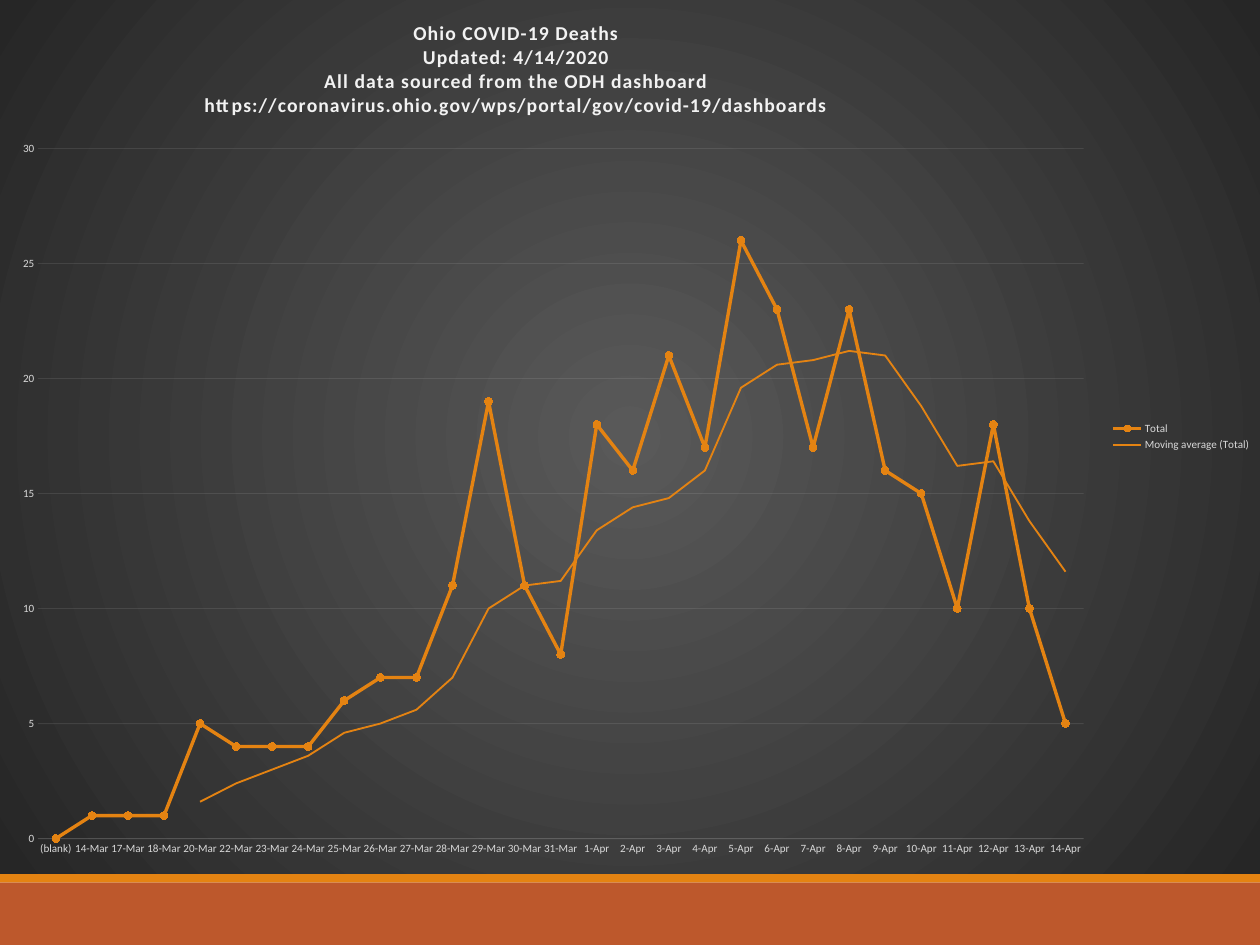
import dataclasses

import pptx
import pptx.chart.data
import pptx.dml.color
import pptx.enum.chart
import pptx.enum.shapes
import pptx.oxml
import pptx.oxml.ns
import pptx.util

Pt = pptx.util.Pt
NAMESPACES = pptx.oxml.ns.nsdecls("c", "a")

TITLE_LINES = [
    "Ohio COVID-19 Deaths",
    "Updated: 4/14/2020",
    "All data sourced from the ODH dashboard",
    "https://coronavirus.ohio.gov/wps/portal/gov/covid-19/dashboards",
]
MARCH_DAYS = [14, 17, 18, 20, *range(22, 32)]
DATES = ["(blank)"] + [f"{day}-Mar" for day in MARCH_DAYS] + [f"{day}-Apr" for day in range(1, 15)]
DEATHS = [0, 1, 1, 1, 5, 4, 4, 4, 6, 7, 7, 11, 19, 11, 8,
          18, 16, 21, 17, 26, 23, 17, 23, 16, 15, 10, 18, 10, 5]


@dataclasses.dataclass(frozen=True)
class Theme:
    font: str = "Calibri"
    title_size: int = 16
    label_size: int = 9
    title: str = "F2F2F2"
    label: str = "D9D9D9"
    grid: str = "F2F2F2"
    series: str = "E48312"
    marker: str = "EF8407"
    footer: str = "BD582C"
    center: str = "595959"
    edge: str = "262626"


def rgb(color):
    return pptx.dml.color.RGBColor.from_string(color)


def set_font(font, name, size, color, bold=False):
    font.name = name
    font.size = Pt(size)
    font.bold = bold
    font.color.rgb = rgb(color)


def write_lines(text_frame, lines, spacing=0, **font_format):
    """Write one paragraph per line; spacing is in hundredths of a point."""
    for index, line in enumerate(lines):
        paragraph = text_frame.add_paragraph() if index else text_frame.paragraphs[0]
        run = paragraph.add_run()
        run.text = line
        set_font(run.font, **font_format)
        run.font._element.set("spc", str(spacing))


def place(parent, index, **fractions):
    """Give a chart part a manual layout in fractions of the chart."""
    for layout in parent.xpath("./c:layout"):
        parent.remove(layout)
    target = '<c:layoutTarget val="inner"/>' if "w" in fractions else ""
    modes = '<c:xMode val="edge"/><c:yMode val="edge"/>'
    values = "".join(f'<c:{key} val="{value}"/>' for key, value in fractions.items())
    parent.insert(index, pptx.oxml.parse_xml(
        f"<c:layout {NAMESPACES}><c:manualLayout>{target}{modes}{values}"
        "</c:manualLayout></c:layout>"))


class SlideBuilder:
    def __init__(self, slide, theme):
        self.slide = slide
        self.theme = theme

    def band(self, left, top, width, height, color):
        shape = self.slide.shapes.add_shape(
            pptx.enum.shapes.MSO_SHAPE.RECTANGLE, Pt(left), Pt(top), Pt(width), Pt(height))
        shape.shadow.inherit = False
        shape.fill.solid()
        shape.fill.fore_color.rgb = rgb(color)
        shape.line.fill.background()

    def line_chart(self, left, top, width, height):
        theme = self.theme
        data = pptx.chart.data.CategoryChartData()
        data.categories = DATES
        data.add_series("Total", DEATHS)
        chart = self.slide.shapes.add_chart(
            pptx.enum.chart.XL_CHART_TYPE.LINE_MARKERS,
            Pt(left), Pt(top), Pt(width), Pt(height), data).chart
        label_format = dict(name=theme.font, size=theme.label_size, color=theme.label)
        set_font(chart.font, **label_format)
        write_lines(chart.chart_title.text_frame, TITLE_LINES, spacing=100,
                    name=theme.font, size=theme.title_size, color=theme.title, bold=True)
        chart.has_legend = True
        chart.legend.position = pptx.enum.chart.XL_LEGEND_POSITION.RIGHT
        chart.legend.include_in_layout = False
        set_font(chart.legend.font, **label_format)
        place(chart.element.xpath("c:chart/c:title")[0], 1, x=0.16, y=0.02)
        place(chart.element.xpath("c:chart/c:plotArea")[0], 0, x=0.03, y=0.17, w=0.83, h=0.79)
        self.axes(chart, label_format)
        self.series(chart)
        self.gradient(chart)

    def axes(self, chart, label_format):
        value_axis, category_axis = chart.value_axis, chart.category_axis
        for axis in (value_axis, category_axis):
            axis.major_tick_mark = pptx.enum.chart.XL_TICK_MARK.NONE
            axis.minor_tick_mark = pptx.enum.chart.XL_TICK_MARK.NONE
            set_font(axis.tick_labels.font, **label_format)
        value_axis.minimum_scale, value_axis.maximum_scale = 0, 30
        value_axis.major_unit = 5
        value_axis.format.line.fill.background()
        for line in (value_axis.major_gridlines.format.line, category_axis.format.line):
            line.width = Pt(0.75)
            line.color.rgb = rgb(self.theme.grid)
        for color in chart.element.xpath(
                ".//c:majorGridlines//a:srgbClr | .//c:catAx/c:spPr//a:srgbClr"):
            color.append(pptx.oxml.parse_xml(f'<a:alpha {NAMESPACES} val="10000"/>'))

    def series(self, chart):
        theme = self.theme
        chart.plots[0].vary_by_categories = False
        series = chart.plots[0].series[0]
        series.smooth = False
        series.format.line.width = Pt(2.75)
        series.format.line.color.rgb = rgb(theme.series)
        series.marker.style = pptx.enum.chart.XL_MARKER_STYLE.CIRCLE
        series.marker.size = 6
        series.marker.format.fill.solid()
        series.marker.format.fill.fore_color.rgb = rgb(theme.marker)
        series.marker.format.line.color.rgb = rgb(theme.series)
        chart.element.xpath(".//c:ser/c:cat")[0].addprevious(pptx.oxml.parse_xml(
            f'<c:trendline {NAMESPACES}><c:spPr><a:ln w="{Pt(1.5)}"><a:solidFill>'
            f'<a:srgbClr val="{theme.series}"/></a:solidFill></a:ln></c:spPr>'
            '<c:trendlineType val="movingAvg"/><c:period val="5"/>'
            '<c:dispRSqr val="0"/><c:dispEq val="0"/></c:trendline>'))

    def gradient(self, chart):
        """Fill the chart area with a gradient spreading from its centre."""
        chart.element.xpath("c:chart")[0].addnext(pptx.oxml.parse_xml(
            f'<c:spPr {NAMESPACES}><a:gradFill><a:gsLst>'
            f'<a:gs pos="0"><a:srgbClr val="{self.theme.center}"/></a:gs>'
            f'<a:gs pos="100000"><a:srgbClr val="{self.theme.edge}"/></a:gs></a:gsLst>'
            '<a:path path="circle"><a:fillToRect l="50000" t="50000" r="50000" b="50000"/>'
            '</a:path></a:gradFill><a:ln><a:noFill/></a:ln></c:spPr>'))


def main():
    width, height = 1024, 768
    presentation = pptx.Presentation()
    presentation.slide_width, presentation.slide_height = Pt(width), Pt(height)
    slide = presentation.slides.add_slide(presentation.slide_layouts[6])
    theme = Theme()
    builder = SlideBuilder(slide, theme)
    builder.band(0, 717, width, 51, theme.footer)
    builder.band(0, 709.5, width, 7.5, theme.series)
    builder.line_chart(0, 0, width, 710)
    presentation.save("out.pptx")


if __name__ == "__main__":
    main()
